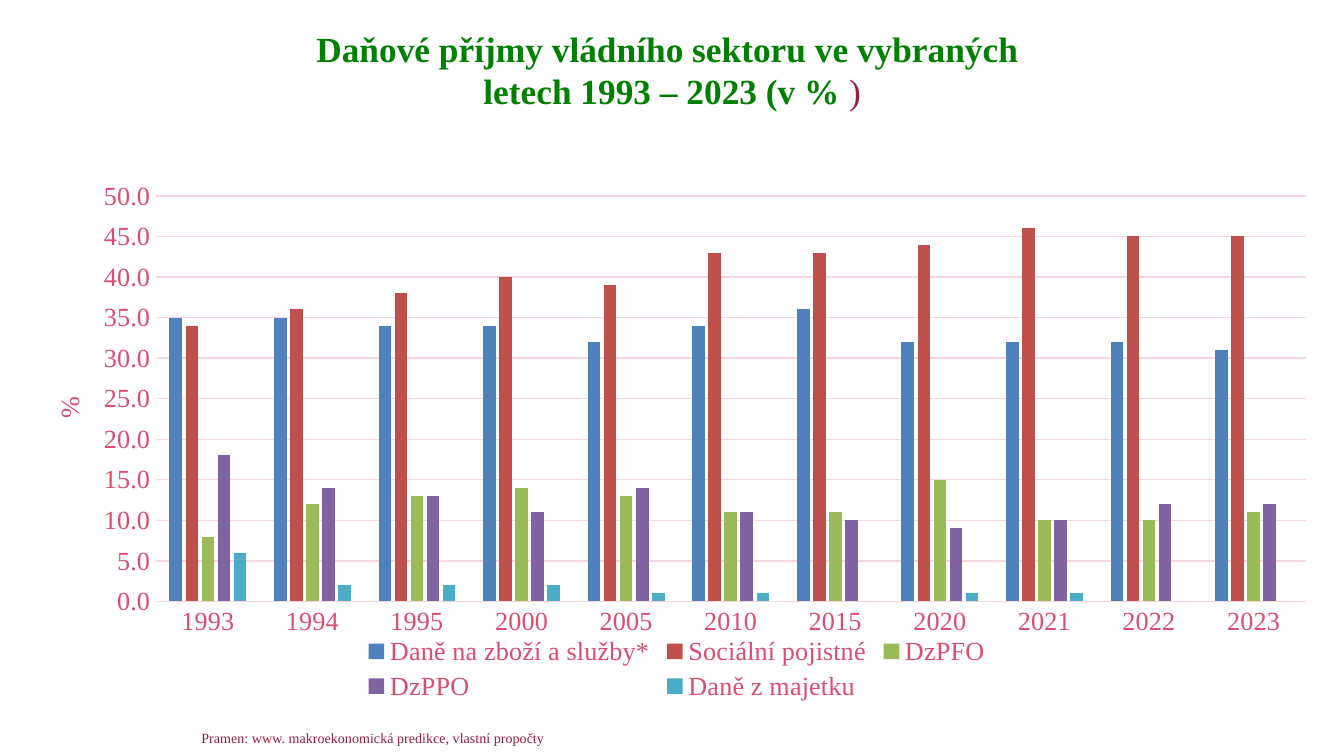
from dataclasses import dataclass

import pptx
import pptx.chart.data
import pptx.dml.color
import pptx.enum.chart
import pptx.enum.text
import pptx.oxml
import pptx.oxml.ns
import pptx.util

Pt = pptx.util.Pt
FONT = "Times New Roman"
COLORS = {
    "title": "008000",
    "dark": "981E3A",
    "label": "DC4D6E",
    "grid": "F7D6DD",
    "goods": "4F81BD",
    "social": "C0504D",
    "personal": "9BBB59",
    "corporate": "8064A2",
    "property": "4BACC6",
}
YEARS = ["1993", "1994", "1995", "2000", "2005", "2010",
         "2015", "2020", "2021", "2022", "2023"]


@dataclass
class Box:
    left: float
    top: float
    width: float
    height: float

    def lengths(self) -> tuple:
        return tuple(Pt(v) for v in (self.left, self.top, self.width, self.height))


@dataclass
class Tax:
    name: str
    color: str
    shares: list[int]


TAXES = [
    Tax("Daně na zboží a služby*", "goods",
        [35, 35, 34, 34, 32, 34, 36, 32, 32, 32, 31]),
    Tax("Sociální pojistné", "social",
        [34, 36, 38, 40, 39, 43, 43, 44, 46, 45, 45]),
    Tax("DzPFO", "personal",
        [8, 12, 13, 14, 13, 11, 11, 15, 10, 10, 11]),
    Tax("DzPPO", "corporate",
        [18, 14, 13, 11, 14, 11, 10, 9, 10, 12, 12]),
    Tax("Daně z majetku", "property",
        [6, 2, 2, 2, 1, 1, 0, 1, 1, 0, 0]),
]
CHART = Box(25.4, 87.5, 674.6, 290.9)
PLOT = Box(58, 17.5, 616.6, 217.3)


def rgb(key: str) -> pptx.dml.color.RGBColor:
    return pptx.dml.color.RGBColor.from_string(COLORS[key])


def style_font(font, size: float, color: str, bold: bool = False) -> None:
    font.name = FONT
    font.size = Pt(size)
    font.bold = bold
    font.color.rgb = rgb(color)


def add_run(p, text: str, *, size: float, color: str, bold: bool = False) -> None:
    r = p.add_run()
    r.text = text
    style_font(r.font, size, color, bold)


def add_box(s, box: Box):
    tf = s.shapes.add_textbox(*box.lengths()).text_frame
    tf.word_wrap = True
    return tf.paragraphs[0]


def style_line(line, color: str) -> None:
    line.color.rgb = rgb(color)
    line.width = Pt(0.75)


def set_layout(layout, **values) -> None:
    for child in list(layout):
        layout.remove(child)
    manual = pptx.oxml.parse_xml(
        f"<c:manualLayout {pptx.oxml.ns.nsdecls('c')}>"
        + "".join(f'<c:{tag} val="{val}"/>' for tag, val in values.items())
        + "</c:manualLayout>")
    layout.append(manual)


def place_plot(chart) -> None:
    area = chart._chartSpace.chart.plotArea
    layout = area.find(pptx.oxml.ns.qn("c:layout"))
    if layout is None:
        layout = pptx.oxml.parse_xml(f"<c:layout {pptx.oxml.ns.nsdecls('c')}/>")
        area.insert(0, layout)
    set_layout(layout, layoutTarget="inner", xMode="edge", yMode="edge",
               x=PLOT.left / CHART.width, y=PLOT.top / CHART.height,
               w=PLOT.width / CHART.width, h=PLOT.height / CHART.height)


def style_axis(axis) -> None:
    axis.major_tick_mark = pptx.enum.chart.XL_TICK_MARK.NONE
    axis.minor_tick_mark = pptx.enum.chart.XL_TICK_MARK.NONE
    style_font(axis.tick_labels.font, 14, "label")


def add_axis_title(axis, text: str) -> None:
    title = axis.axis_title
    tf = title.text_frame
    add_run(tf.paragraphs[0], text, size=14, color="label")
    body = tf._txBody.bodyPr
    body.set("rot", "-5400000")
    body.set("vert", "horz")
    layout = title._element.find(pptx.oxml.ns.qn("c:layout"))
    if layout is not None:
        set_layout(layout, xMode="edge", yMode="edge", x=0, y=0.42)


def add_tax_chart(s) -> None:
    data = pptx.chart.data.CategoryChartData(number_format="0.0")
    data.categories = YEARS
    for tax in TAXES:
        data.add_series(tax.name, tax.shares)
    kind = pptx.enum.chart.XL_CHART_TYPE.COLUMN_CLUSTERED
    chart = s.shapes.add_chart(kind, *CHART.lengths(), data).chart
    chart.has_title = False
    style_font(chart.font, 10, "dark")
    place_plot(chart)

    plot = chart.plots[0]
    plot.gap_width = 219
    plot.overlap = -27
    plot.vary_by_categories = False
    for series, tax in zip(plot.series, TAXES):
        series.format.fill.solid()
        series.format.fill.fore_color.rgb = rgb(tax.color)
        series.invert_if_negative = False

    style_axis(chart.category_axis)
    style_line(chart.category_axis.format.line, "grid")

    axis = chart.value_axis
    style_axis(axis)
    axis.minimum_scale = 0
    axis.maximum_scale = 50
    axis.major_unit = 5
    axis.tick_labels.number_format = "0.0"
    axis.tick_labels.number_format_is_linked = False
    axis.format.line.fill.background()
    style_line(axis.major_gridlines.format.line, "grid")
    add_axis_title(axis, "%")

    chart.has_legend = True
    chart.legend.position = pptx.enum.chart.XL_LEGEND_POSITION.BOTTOM
    chart.legend.include_in_layout = False
    style_font(chart.legend.font, 14, "label")


def main() -> None:
    prs = pptx.Presentation()
    prs.slide_width = Pt(720)
    prs.slide_height = Pt(405)
    s = prs.slides.add_slide(prs.slide_layouts[6])

    p = add_box(s, Box(117.1, 11, 486, 42.5))
    p.alignment = pptx.enum.text.PP_ALIGN.CENTER
    add_run(p, "Daňové příjmy vládního sektoru ve vybraných ",
            size=18.9, color="title", bold=True)
    p.add_line_break()
    add_run(p, "letech 1993 – 2023 (v %", size=18.9, color="title", bold=True)
    add_run(p, " )", size=18.9, color="dark")

    add_tax_chart(s)

    p = add_box(s, Box(100.8, 387.4, 200.2, 16.6))
    add_run(p, "Pramen: www. makroekonomická predikce, vlastní propočty",
            size=7.5, color="dark")
    prs.save("out.pptx")


if __name__ == "__main__":
    main()
